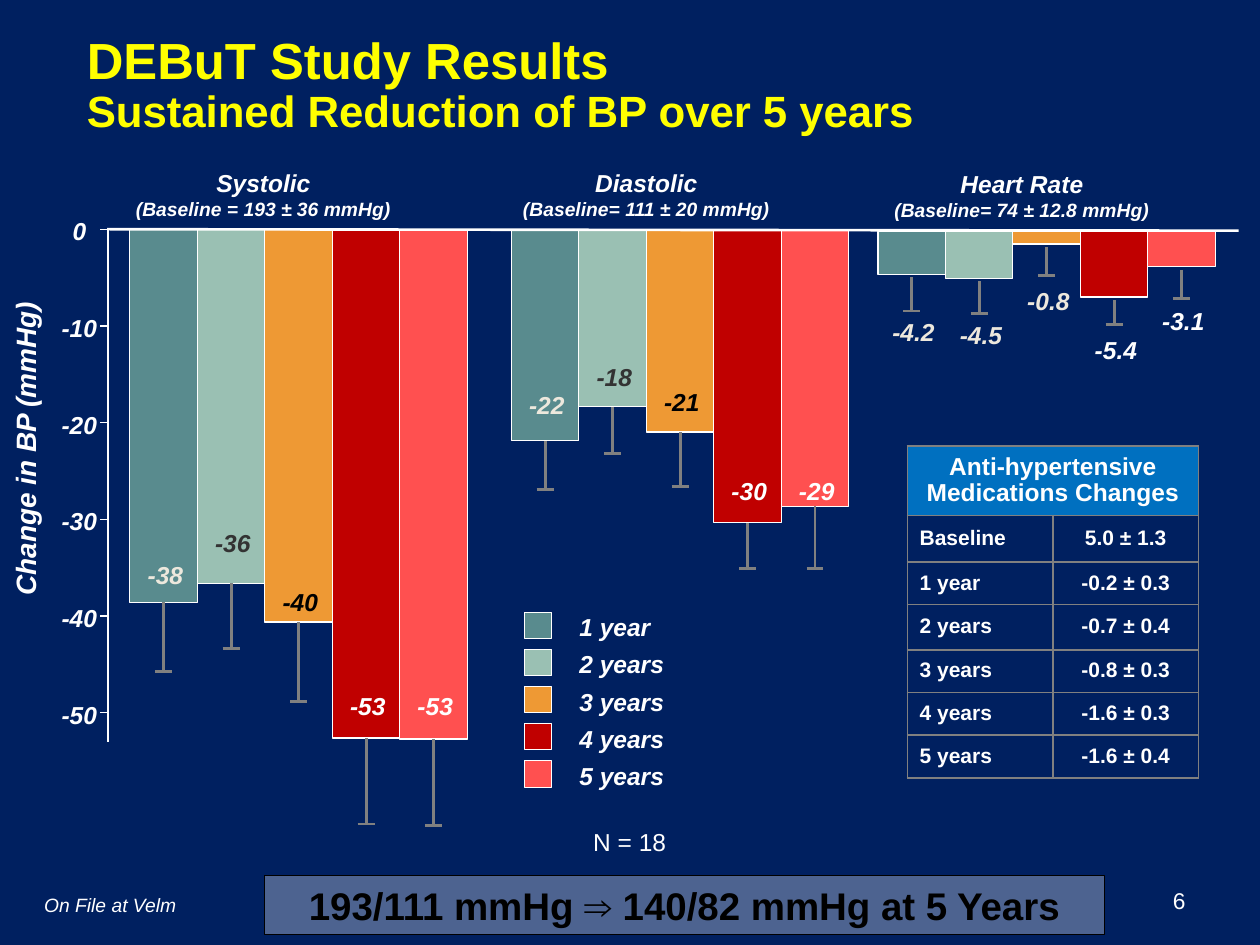
import dataclasses

import lxml.etree
import pptx
import pptx.dml.color
import pptx.enum.shapes
import pptx.enum.text
import pptx.oxml.ns
import pptx.util

Cm = pptx.util.Cm
Pt = pptx.util.Pt
ALIGN = pptx.enum.text.PP_ALIGN
ANCHOR = pptx.enum.text.MSO_ANCHOR
AUTO_SIZE = pptx.enum.text.MSO_AUTO_SIZE
qn = pptx.oxml.ns.qn


@dataclasses.dataclass(frozen=True)
class Theme:
    font: str = "Arial"
    background: str = "002060"
    white: str = "FFFFFF"
    black: str = "000000"
    cream: str = "EDE8DD"
    dark: str = "333333"
    yellow: str = "FFFF00"
    grey: str = "808080"
    header: str = "0070C0"
    years: tuple = ("598B8E", "9AC0B3", "EE9934", "C00000", "FF5050")
    title: int = 29
    subtitle: int = 25
    banner: int = 22
    axis: int = 16
    body: int = 14
    number: int = 13
    table: int = 12
    small: int = 11


THEME = Theme()
ITALIC = {"bold": True, "italic": True}
INSET = (0.25, 0.13)
BAR_WIDTH = 1.36
BAR_LABELS = (THEME.cream, THEME.dark, THEME.black, THEME.white, THEME.white)
RATE_LABELS = (THEME.cream,) * 3 + (THEME.white,) * 2

SERIES = [
    {"heading": ("Systolic", "(Baseline = 193 ± 36 mmHg)"), "heading_at": (2.39, 3.25),
     "left": 2.62, "top": 4.62, "gap": 0, "colors": BAR_LABELS,
     "bars": [("-38", 7.52, 13.54, 11.28), ("-36", 7.14, 13.08, 10.64),
              ("-40", 7.92, 14.15, 11.84), ("-53", 10.26, 16.61, 13.94),
              ("-53", 10.28, 16.64, 13.94)]},
    {"heading": ("Diastolic", "(Baseline= 111 ± 20 mmHg)"), "heading_at": (10.11, 3.25),
     "left": 10.31, "top": 4.62, "gap": 0, "colors": BAR_LABELS,
     "bars": [("-22", 4.27, 9.86, 7.87), ("-18", 3.58, 9.14, 7.29),
              ("-21", 4.09, 9.8, 7.8), ("-30", 5.92, 11.46, 9.6),
              ("-29", 5.59, 11.46, 9.6)]},
    {"heading": ("Heart Rate", "(Baseline= 74 ± 12.8 mmHg)"), "heading_at": (17.68, 3.28),
     "left": 17.7, "top": 4.67, "gap": 0.06, "colors": RATE_LABELS,
     "bars": [("-4.2", 0.86, 6.27, 6.4), ("-4.5", 0.94, 6.32, 6.45),
              ("-0.8", 0.25, 5.56, 5.77), ("-5.4", 1.32, 6.55, 6.76),
              ("-3.1", 0.71, 6.02, 6.17)]},
]
MEDICATIONS = [
    ("Baseline", "5.0 ± 1.3"), ("1 year", "-0.2 ± 0.3"), ("2 years", "-0.7 ± 0.4"),
    ("3 years", "-0.8 ± 0.3"), ("4 years", "-1.6 ± 0.3"), ("5 years", "-1.6 ± 0.4"),
]
ROW_HEIGHTS = (1.4, 0.94, 0.86, 0.91, 0.86, 0.86, 0.86)


def rgb(value):
    return pptx.dml.color.RGBColor.from_string(value)


def apply(target, values):
    for name, value in values.items():
        setattr(target, name, value)


class Painter:
    def __init__(self, slide, theme):
        self.slide = slide
        self.theme = theme

    def fill_text(self, frame, lines, color=None, align=ALIGN.CENTER, spacing=1.0,
                  inset=(0, 0), anchor=ANCHOR.TOP, wrap=True, **style):
        horizontal, vertical = map(Cm, inset)
        apply(frame, {"auto_size": AUTO_SIZE.NONE, "word_wrap": wrap,
                      "vertical_anchor": anchor, "margin_left": horizontal,
                      "margin_right": horizontal, "margin_top": vertical,
                      "margin_bottom": vertical})
        for index, (text, size) in enumerate(lines):
            paragraph = frame.add_paragraph() if index else frame.paragraphs[0]
            apply(paragraph, {"alignment": align, "line_spacing": spacing})
            run = paragraph.add_run()
            run.text = text
            apply(run.font, {"name": self.theme.font, "size": Pt(size), **style})
            run.font.color.rgb = rgb(color or self.theme.white)

    def title(self, box, lines, **style):
        shape = self.slide.shapes.title
        apply(shape, dict(zip(("left", "top", "width", "height"), map(Cm, box))))
        self.fill_text(shape.text_frame, lines, **style)

    def text(self, box, text, size=None, rotation=0, **style):
        shape = self.slide.shapes.add_textbox(*map(Cm, box))
        shape.rotation = rotation
        lines = text if isinstance(text, list) else [(text, size or self.theme.body)]
        self.fill_text(shape.text_frame, lines, **style)

    def rectangle(self, box, fill, line=None, width=0.63, alpha=None):
        kind = pptx.enum.shapes.MSO_SHAPE.RECTANGLE
        shape = self.slide.shapes.add_shape(kind, *map(Cm, box))
        shape.shadow.inherit = False
        shape.fill.solid()
        shape.fill.fore_color.rgb = rgb(fill)
        shape.line.color.rgb = rgb(line or self.theme.white)
        shape.line.width = Pt(width)
        if alpha:
            color = shape._element.spPr.find(qn("a:solidFill"))[0]
            lxml.etree.SubElement(color, qn("a:alpha"), val=str(alpha * 1000))
        return shape

    def line(self, start, end, color, width):
        kind = pptx.enum.shapes.MSO_CONNECTOR.STRAIGHT
        connector = self.slide.shapes.add_connector(kind, *map(Cm, start + end))
        connector.line.color.rgb = rgb(color)
        connector.line.width = Pt(width)
        lxml.etree.SubElement(connector._element.spPr, qn("a:effectLst"))

    def whisker(self, center, top, bottom):
        self.line((center, top), (center, bottom), self.theme.grey, 1.63)
        self.line((center - 0.17, bottom), (center + 0.17, bottom), self.theme.grey, 1.63)

    def series(self, heading, heading_at, left, top, gap, colors, bars):
        sizes = (self.theme.body, self.theme.small)
        self.text((*heading_at, 5.84, 1.32), list(zip(heading, sizes)),
                  inset=INSET, wrap=False, **ITALIC)
        for index, (label, height, whisker_end, label_top) in enumerate(bars):
            bar_left = left + index * BAR_WIDTH
            center = bar_left + BAR_WIDTH / 2
            self.rectangle((bar_left, top, BAR_WIDTH, height), self.theme.years[index])
            self.whisker(center, top + height + gap, whisker_end)
            self.text((center - 0.74, label_top, 1.55, 0.61), label,
                      color=colors[index], **ITALIC)

    def axis(self):
        white = self.theme.white
        self.line((2.18, 4.62), (2.18, 14.96), white, 1.5)
        self.line((2.16, 4.62), (24.97, 4.65), white, 1.5)
        for index in range(6):
            tick = 4.62 + 1.95 * index
            self.line((2.02, tick), (2.18, tick), white, 0.75)
            self.text((1.24, tick - 0.26, 0.72, 0.61), str(-10 * index),
                      wrap=False, **ITALIC)
        self.text((-3.94, 8.69, 8.92, 0.71), "Change in BP (mmHg)",
                  self.theme.axis, rotation=270, **ITALIC)

    def legend(self):
        for index, color in enumerate(self.theme.years):
            top = 12.34 + 0.75 * index
            self.rectangle((10.58, top, 0.54, 0.53), color)
            label = f"{index + 1} year" + ("s" if index else "")
            self.text((11.68, top, 1.75, 0.61), label, align=ALIGN.LEFT,
                      wrap=False, **ITALIC)

    def cell(self, cell, text, size, align, fill=None):
        self.fill_text(cell.text_frame, [(text, size)], align=align, spacing=0.95, bold=True)
        apply(cell, {"vertical_anchor": ANCHOR.MIDDLE, "margin_left": Cm(0.25),
                     "margin_right": Cm(0.25), "margin_top": Cm(0.13),
                     "margin_bottom": Cm(0.13)})
        self.format_cell(cell, fill)

    def format_cell(self, cell, fill):
        properties = cell._tc.get_or_add_tcPr()
        for side in ("a:lnL", "a:lnR", "a:lnT", "a:lnB"):
            border = lxml.etree.SubElement(properties, qn(side), w=str(Pt(1)))
            solid = lxml.etree.SubElement(border, qn("a:solidFill"))
            lxml.etree.SubElement(solid, qn("a:srgbClr"), val=self.theme.grey)
        if fill:
            cell.fill.solid()
            cell.fill.fore_color.rgb = rgb(fill)
        else:
            cell.fill.background()

    def table(self, box, heading, rows, heights):
        frame = self.slide.shapes.add_table(len(rows) + 1, 2, *map(Cm, box))
        table = frame.table
        apply(table, {"first_row": False, "horz_banding": False})
        for row, height in zip(table.rows, heights):
            row.height = Cm(height)
        table.cell(0, 0).merge(table.cell(0, 1))
        self.cell(table.cell(0, 0), heading, self.theme.body, ALIGN.CENTER, self.theme.header)
        self.format_cell(table.cell(0, 1), self.theme.header)
        for row, values in enumerate(rows, 1):
            for column, align in enumerate((ALIGN.LEFT, ALIGN.CENTER)):
                self.cell(table.cell(row, column), values[column], self.theme.table, align)

    def banner(self, box, text):
        shape = self.rectangle(box, self.theme.white, self.theme.black, 0.75, alpha=30)
        self.fill_text(shape.text_frame, [(text, self.theme.banner)], self.theme.black,
                       inset=INSET, anchor=ANCHOR.MIDDLE, bold=True)


def main():
    presentation = pptx.Presentation()
    apply(presentation, {"slide_width": Cm(25.4), "slide_height": Cm(19.05)})
    slide = presentation.slides.add_slide(presentation.slide_layouts[5])
    slide.background.fill.solid()
    slide.background.fill.fore_color.rgb = rgb(THEME.background)
    painter = Painter(slide, THEME)
    painter.title((1.5, 0.58, 23.9, 2.54),
                  [("DEBuT Study Results", THEME.title),
                   ("Sustained Reduction of BP over 5 years", THEME.subtitle)],
                  color=THEME.yellow, align=ALIGN.LEFT, spacing=0.9, inset=INSET, bold=True)
    for series in SERIES:
        painter.series(**series)
    painter.axis()
    painter.legend()
    painter.table((18.29, 8.99, 5.87, 6.73), "Anti-hypertensive Medications Changes",
                  MEDICATIONS, ROW_HEIGHTS)
    painter.text((11.71, 16.61, 2.06, 0.79), "N = 18", align=ALIGN.LEFT, spacing=0.9,
                 inset=INSET, anchor=ANCHOR.BOTTOM, wrap=False)
    painter.text((0.64, 17.88, 3.35, 0.74), "On File at Velm", THEME.small,
                 align=ALIGN.LEFT, inset=INSET, wrap=False, italic=True)
    painter.banner((5.33, 17.65, 16.94, 1.19), "193/111 mmHg ⇒ 140/82 mmHg at 5 Years")
    painter.text((22.86, 17.65, 1.27, 1.02), "6", THEME.number, align=ALIGN.RIGHT,
                 inset=(0.23, 0.1), anchor=ANCHOR.MIDDLE)
    presentation.save("out.pptx")


if __name__ == "__main__":
    main()
